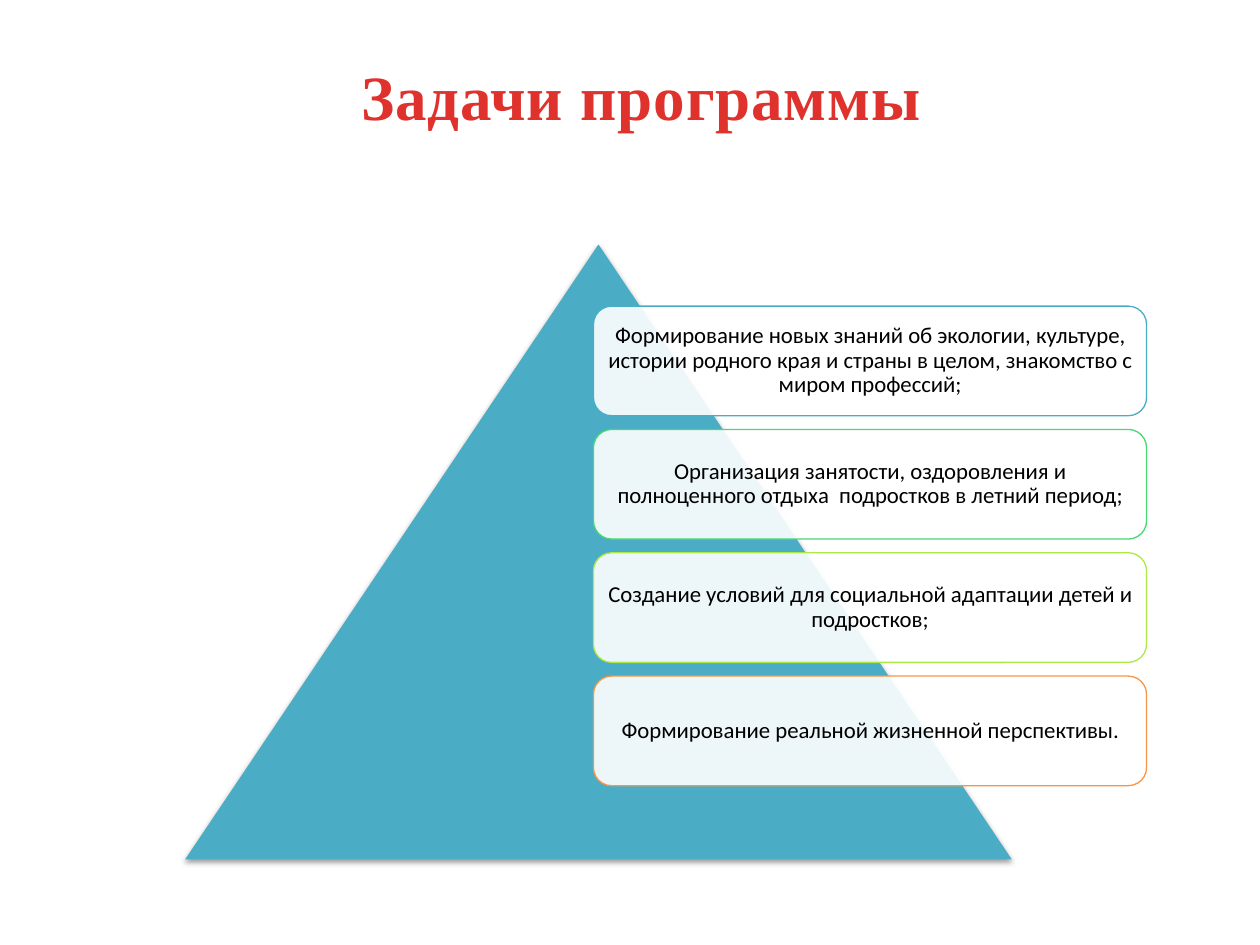
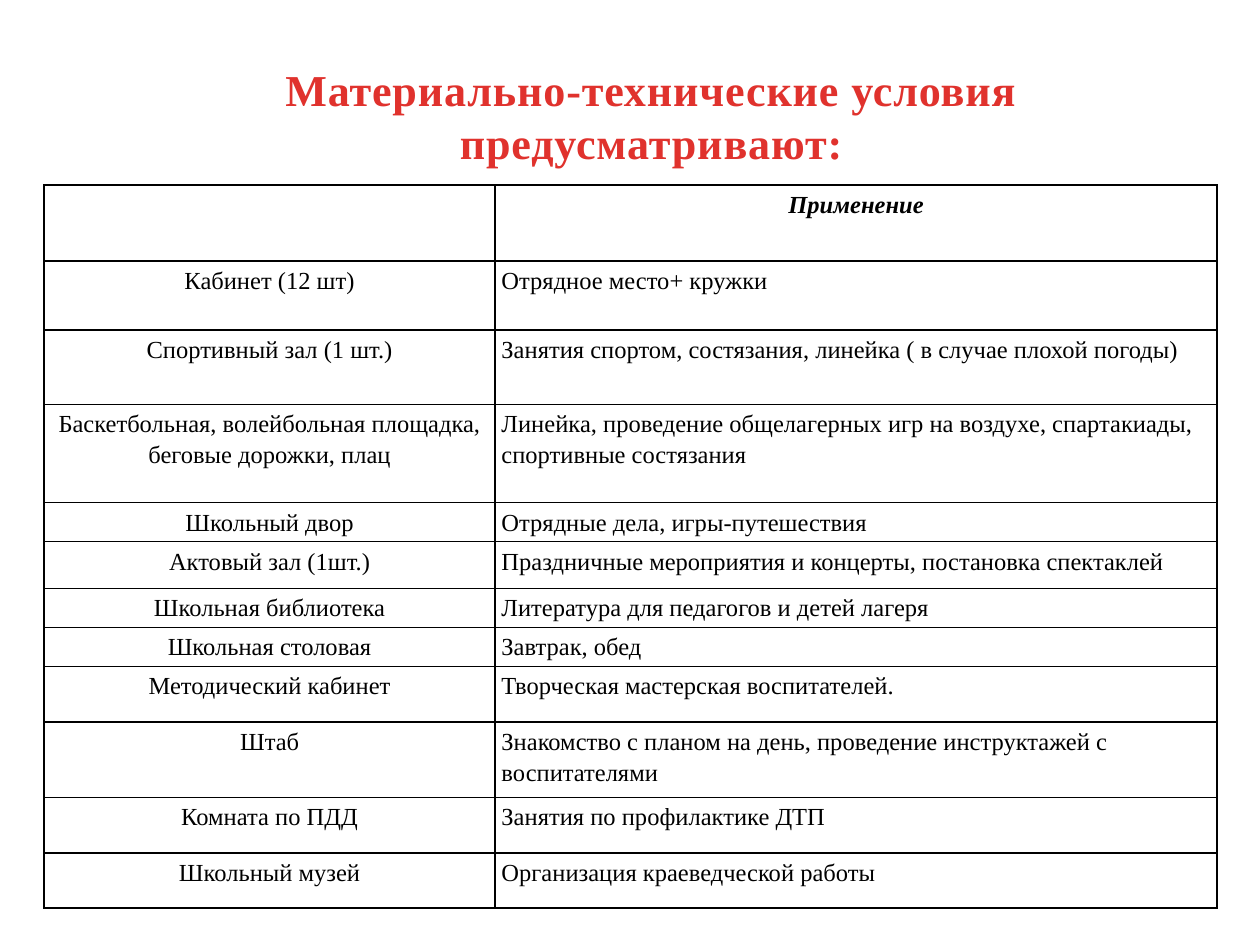
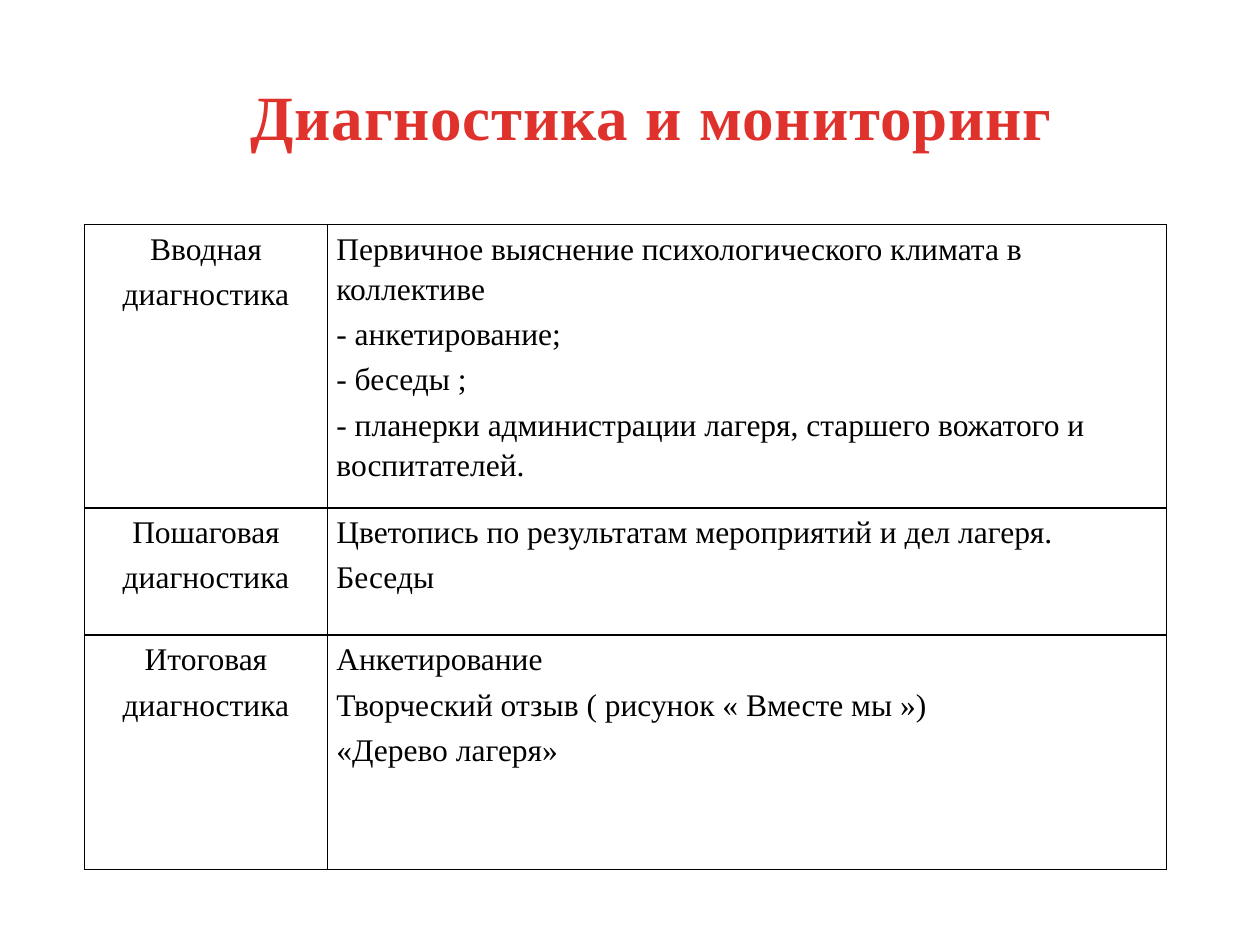
from lxml import etree
from pptx import Presentation
from pptx.dml.color import RGBColor
from pptx.enum import shapes, text
from pptx.oxml import parse_xml
from pptx.oxml.ns import nsdecls, qn
from pptx.util import Inches, Pt

SERIF, SANS = "Times New Roman", "Calibri"
RED, BLACK, WHITE, TEAL = "E0322D", "000000", "FFFFFF", "4BACC6"
TITLE_ONLY = 5

GOALS = [
    ("Формирование новых знаний об экологии, культуре, истории родного края "
     "и страны в целом, знакомство с миром профессий;", TEAL),
    ("Организация занятости, оздоровления и полноценного отдыха  подростков "
     "в летний период;", "47D872"),
    ("Создание условий для социальной адаптации детей и подростков;", "ACE946"),
    ("Формирование реальной жизненной перспективы.", "F79646"),
]

# Row height, place, use
FACILITIES = [
    (0.6, "", "Применение"),
    (0.55, "Кабинет (12 шт)", "Отрядное место+ кружки"),
    (0.59, "Спортивный зал (1 шт.)",
     "Занятия спортом, состязания, линейка ( в случае плохой погоды)"),
    (0.78, "Баскетбольная, волейбольная площадка, беговые дорожки, плац",
     "Линейка, проведение общелагерных игр на воздухе, спартакиады, "
     "спортивные состязания"),
    (0.31, "Школьный двор", "Отрядные дела, игры-путешествия"),
    (0.37, "Актовый зал (1шт.)",
     "Праздничные мероприятия и концерты, постановка спектаклей"),
    (0.31, "Школьная библиотека", "Литература для педагогов и детей лагеря"),
    (0.31, "Школьная столовая", "Завтрак, обед"),
    (0.44, "Методический кабинет", "Творческая мастерская воспитателей."),
    (0.6, "Штаб",
     "Знакомство с планом на день, проведение инструктажей с воспитателями"),
    (0.44, "Комната по ПДД", "Занятия по профилактике ДТП"),
    (0.44, "Школьный музей", "Организация краеведческой работы"),
]

# Row height, stage, methods
DIAGNOSTICS = [
    (2.25, "Вводная\nдиагностика",
     "Первичное выяснение психологического климата в коллективе\n"
     "- анкетирование;\n- беседы ;\n"
     "- планерки администрации лагеря, старшего вожатого и воспитателей."),
    (1.01, "Пошаговая\nдиагностика",
     "Цветопись по результатам мероприятий и дел лагеря.\nБеседы"),
    (1.86, "Итоговая\nдиагностика",
     "Анкетирование\nТворческий отзыв ( рисунок « Вместе мы »)\n«Дерево лагеря»"),
]


def rgb(value):
    return RGBColor.from_string(value)


def set_font(font, name, size, color=BLACK, bold=False, italic=False):
    font.name, font.size = name, Pt(size)
    font.bold, font.italic = bold, italic
    font.color.rgb = rgb(color)


class Slides:
    """Holds the deck, its style and the slide being filled."""

    def __init__(self):
        self.deck = Presentation()
        self.deck.slide_width, self.deck.slide_height = Inches(10), Inches(7.5)
        self.page = None

    def start(self, heading, size=36, place=(0.67, 0.52, 9, 0.79)):
        self.page = self.deck.slides.add_slide(self.deck.slide_layouts[TITLE_ONLY])
        title = self.page.shapes.title
        title.left, title.top, title.width, title.height = map(Inches, place)
        frame = title.text_frame
        frame.text = heading
        frame.auto_size = text.MSO_AUTO_SIZE.NONE
        frame.vertical_anchor = text.MSO_ANCHOR.MIDDLE
        para = frame.paragraphs[0]
        para.alignment = text.PP_ALIGN.CENTER
        set_font(para.font, SERIF, size, RED, bold=True)
        para.runs[0]._r.get_or_add_rPr().set("spc", "50")

    def shape(self, kind, place, fill):
        shape = self.page.shapes.add_shape(kind, *map(Inches, place))
        shape.shadow.inherit = False
        shape.fill.solid()
        shape.fill.fore_color.rgb = rgb(fill)
        shape.line.fill.background()
        return shape

    def pyramid(self, *place):
        triangle = self.shape(shapes.MSO_SHAPE.ISOSCELES_TRIANGLE, place, TEAL)
        effects = triangle._element.spPr.find(qn("a:effectLst"))
        effects.append(parse_xml(
            f'<a:outerShdw {nsdecls("a")} blurRad="{Pt(3.1)}" dist="{Pt(1.6)}" '
            f'dir="5400000" rotWithShape="0"><a:srgbClr val="{BLACK}">'
            '<a:alpha val="38000"/></a:srgbClr></a:outerShdw>'))

    def card(self, words, outline, *place):
        card = self.shape(shapes.MSO_SHAPE.ROUNDED_RECTANGLE, place, WHITE)
        color = card._element.spPr.find(qn("a:solidFill"))[0]
        etree.SubElement(color, qn("a:alpha")).set("val", "90000")
        card.line.color.rgb = rgb(outline)
        card.line.width = Pt(0.75)
        frame = card.text_frame
        frame.text = words
        frame.word_wrap = True
        frame.vertical_anchor = text.MSO_ANCHOR.MIDDLE
        frame.margin_left = frame.margin_right = Inches(0.05)
        frame.margin_top = frame.margin_bottom = Inches(0.05)
        para = frame.paragraphs[0]
        para.alignment = text.PP_ALIGN.CENTER
        para.line_spacing = 0.9
        set_font(para.font, SANS, 13)

    def table(self, left, top, widths, rows, size, inset, header=False):
        height = sum(row[0] for row in rows)
        table = self.page.shapes.add_table(
            len(rows), len(widths), Inches(left), Inches(top),
            Inches(sum(widths)), Inches(height)).table
        table.first_row = table.horz_banding = False
        for column, width in zip(table.columns, widths):
            column.width = Inches(width)
        for index, (row_height, *entries) in enumerate(rows):
            table.rows[index].height = Inches(row_height)
            for column, words in enumerate(entries):
                heading = header and index == 0
                self.cell(table.cell(index, column), words, size, inset,
                          centred=heading or column == 0, heading=heading)

    def cell(self, cell, words, size, inset, centred, heading):
        cell.margin_left = cell.margin_right = Inches(inset)
        cell.margin_top, cell.margin_bottom = Inches(0.02), 0
        for side in "LRTB":
            cell._tc.get_or_add_tcPr().append(parse_xml(
                f'<a:ln{side} {nsdecls("a")} w="{Pt(1)}"><a:solidFill>'
                f'<a:srgbClr val="{BLACK}"/></a:solidFill></a:ln{side}>'))
        cell.fill.background()
        cell.text = words
        for number, para in enumerate(cell.text_frame.paragraphs):
            para.alignment = text.PP_ALIGN.CENTER if centred else text.PP_ALIGN.LEFT
            para.line_spacing = 1.15
            para.space_after = Pt(1.5)
            if number:
                para.space_before = Pt(1.5)
            set_font(para.font, SERIF, size, bold=heading, italic=heading)


def main():
    slides = Slides()

    slides.start("Задачи программы", place=(0.59, 0.13, 9, 1.25))
    slides.pyramid(1.47, 1.94, 6.56, 4.88)
    card_height = 0.87
    pitch = card_height * 9 / 8
    for index, (goal, outline) in enumerate(GOALS):
        slides.card(goal, outline, 4.71, 2.43 + index * pitch, 4.39, card_height)

    slides.start("Материально-технические условия предусматривают:", size=25.2)
    slides.table(0.35, 1.47, (3.58, 5.73), FACILITIES, size=14, inset=0.05, header=True)

    slides.start("Диагностика и мониторинг")
    slides.table(0.67, 1.78, (1.93, 6.66), DIAGNOSTICS, size=18, inset=0.07)

    slides.deck.save("out.pptx")


if __name__ == "__main__":
    main()
